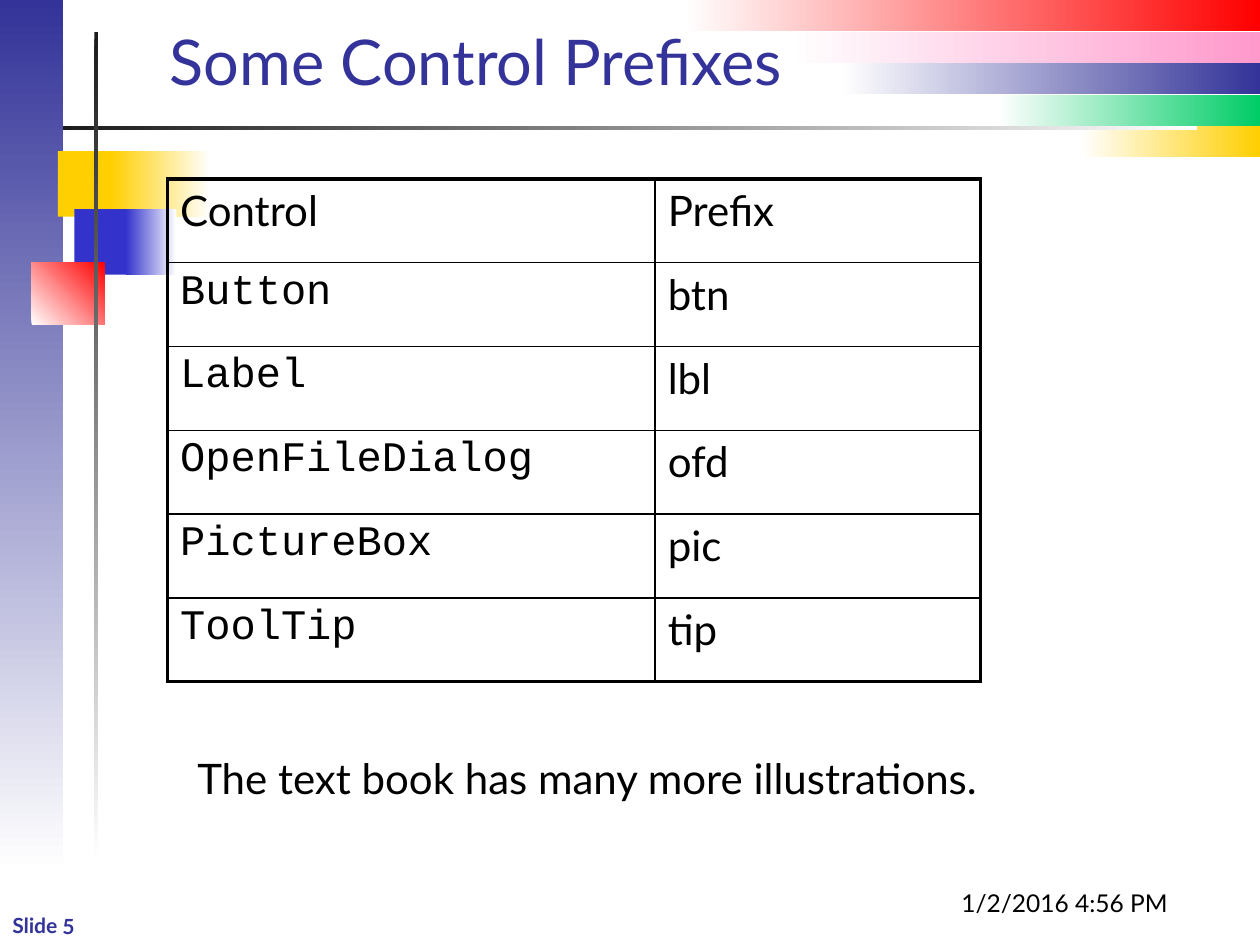
from lxml import etree
from pptx import Presentation
from pptx.dml.color import RGBColor
from pptx.enum.shapes import MSO_SHAPE
from pptx.enum.text import MSO_ANCHOR, MSO_AUTO_SIZE, PP_ALIGN
from pptx.oxml.ns import qn
from pptx.util import Inches, Pt

RECTANGLE = MSO_SHAPE.RECTANGLE
TOP, BOTTOM = MSO_ANCHOR.TOP, MSO_ANCHOR.BOTTOM
LEFT, CENTER = PP_ALIGN.LEFT, PP_ALIGN.CENTER
NO_FIT, GROW = MSO_AUTO_SIZE.NONE, MSO_AUTO_SIZE.SHAPE_TO_FIT_TEXT

THEME = {
    "navy": "333399", "white": "FFFFFF", "yellow": "FFCF01", "red": "FF0000",
    "green": "00CC66", "pink": "FF99CC", "blue": "3333CC", "rule": "1C1C1C",
    "black": "000000",
    "body_font": "Lato", "code_font": "Courier New",
    "title": 36, "body": 24, "date": 14, "number": 12,
    "thin": 1, "thick": 2.25,
}

STRIPE_HEIGHT = 0.25
STRIPES = [("red", 5.42), ("pink", 6.25), ("navy", 6.67), ("green", 7.92), ("yellow", 8.58)]

SIDEBAR = ((0, 0, 0.5, 6.92), ("navy", "white"), 90)
ORNAMENTS = [
    ((0.46, 1.2, 0.48, 0.52), ("yellow",), 0),
    ((0.88, 1.2, 0.79, 0.52), ("yellow", "white"), 0),
    ((0.59, 1.66, 0.46, 0.52), ("blue",), 0),
    ((1, 1.66, 0.4, 0.52), ("blue", "white"), 0),
    ((0.5, 1, 9, 0.03), ("rule", "white"), 0),
    ((0.25, 2.08, 0.58, 0.5), ("white", "red"), 315),
    ((0.75, 0.25, 0.03, 6.58), ("rule", "white"), 90),
]

TABLE_BOX = (1.33, 1.42, 6.46, 3.99)
COLUMN_WIDTHS = [3.87, 2.58]
ROWS = [
    ("Control", "Prefix"),
    ("Button", "btn"),
    ("Label", "lbl"),
    ("OpenFileDialog", "ofd"),
    ("PictureBox", "pic"),
    ("ToolTip", "tip"),
]


def color(name):
    return RGBColor.from_string(THEME[name])


def add_block(slide, box, colors, angle):
    shape = slide.shapes.add_shape(RECTANGLE, *map(Inches, box))
    shape.shadow.inherit = False
    shape.line.fill.background()
    if len(colors) == 1:
        shape.fill.solid()
        shape.fill.fore_color.rgb = color(colors[0])
        return
    shape.fill.gradient()
    shape.fill.gradient_angle = (360 - angle) % 360
    for stop, name, position in zip(shape.fill.gradient_stops, colors, (0, 1)):
        stop.color.rgb = color(name)
        stop.position = position


def write(paragraph, text, size, color_name="black", font="body_font", bold=False):
    run = paragraph.add_run()
    run.text = text
    run.font.name = THEME[font]
    run.font.size = Pt(THEME[size])
    run.font.bold = bold
    run.font.color.rgb = color(color_name)


def add_text(slide, box, text, size, color_name="black", bold=False,
             align=LEFT, anchor=TOP, wrap=True, fit=GROW, rotation=0):
    shape = slide.shapes.add_textbox(*map(Inches, box))
    shape.rotation = rotation
    frame = shape.text_frame
    frame.word_wrap = wrap
    frame.auto_size = fit
    frame.vertical_anchor = anchor
    paragraph = frame.paragraphs[0]
    paragraph.alignment = align
    write(paragraph, text, size, color_name, bold=bold)


def set_borders(cell, outer_edges):
    properties = cell._tc.get_or_add_tcPr()
    for index, (edge, outer) in enumerate(outer_edges.items()):
        width = Pt(THEME["thick" if outer else "thin"])
        line = etree.Element(qn("a:" + edge), w=str(int(width)))
        fill = etree.SubElement(line, qn("a:solidFill"))
        etree.SubElement(fill, qn("a:srgbClr"), val=THEME["black"])
        properties.insert(index, line)


def add_prefix_table(slide):
    last_row, last_column = len(ROWS) - 1, len(COLUMN_WIDTHS) - 1
    table = slide.shapes.add_table(
        len(ROWS), len(COLUMN_WIDTHS), *map(Inches, TABLE_BOX)).table
    table.first_row = False
    table.horz_banding = False
    for column, width in zip(table.columns, COLUMN_WIDTHS):
        column.width = Inches(width)
    for r, values in enumerate(ROWS):
        table.rows[r].height = Inches(TABLE_BOX[3] / len(ROWS))
        for c, value in enumerate(values):
            cell = table.cell(r, c)
            cell.fill.background()
            set_borders(cell, {"lnL": c == 0, "lnR": c == last_column,
                               "lnT": r == 0, "lnB": r == last_row})
            font = "code_font" if r > 0 and c == 0 else "body_font"
            write(cell.text_frame.paragraphs[0], value, "body", font=font)


def main():
    presentation = Presentation()
    presentation.slide_width = Inches(10)
    presentation.slide_height = Inches(7.5)
    slide = presentation.slides.add_slide(presentation.slide_layouts[6])

    add_block(slide, *SIDEBAR)
    for index, (name, left) in enumerate(STRIPES):
        box = (left, index * STRIPE_HEIGHT, 10 - left, STRIPE_HEIGHT)
        add_block(slide, box, ("white", name), 0)
    add_text(slide, (0, 7.2, 1.17, 0.3), "Slide 5", "number", "navy", bold=True, rotation=0.7)
    for ornament in ORNAMENTS:
        add_block(slide, *ornament)

    add_text(slide, (1.25, 0.17, 8.52, 0.66), "Some Control Prefixes", "title", "navy",
             anchor=BOTTOM, fit=NO_FIT)
    add_prefix_table(slide)
    add_text(slide, (1.38, 5.92, 6.56, 0.5), "The text book has many more illustrations.",
             "body", align=CENTER, wrap=False)
    add_text(slide, (7.51, 7, 1.88, 0.34), "1/2/2016 4:56 PM", "date", align=CENTER, wrap=False)
    presentation.save("out.pptx")


if __name__ == "__main__":
    main()
